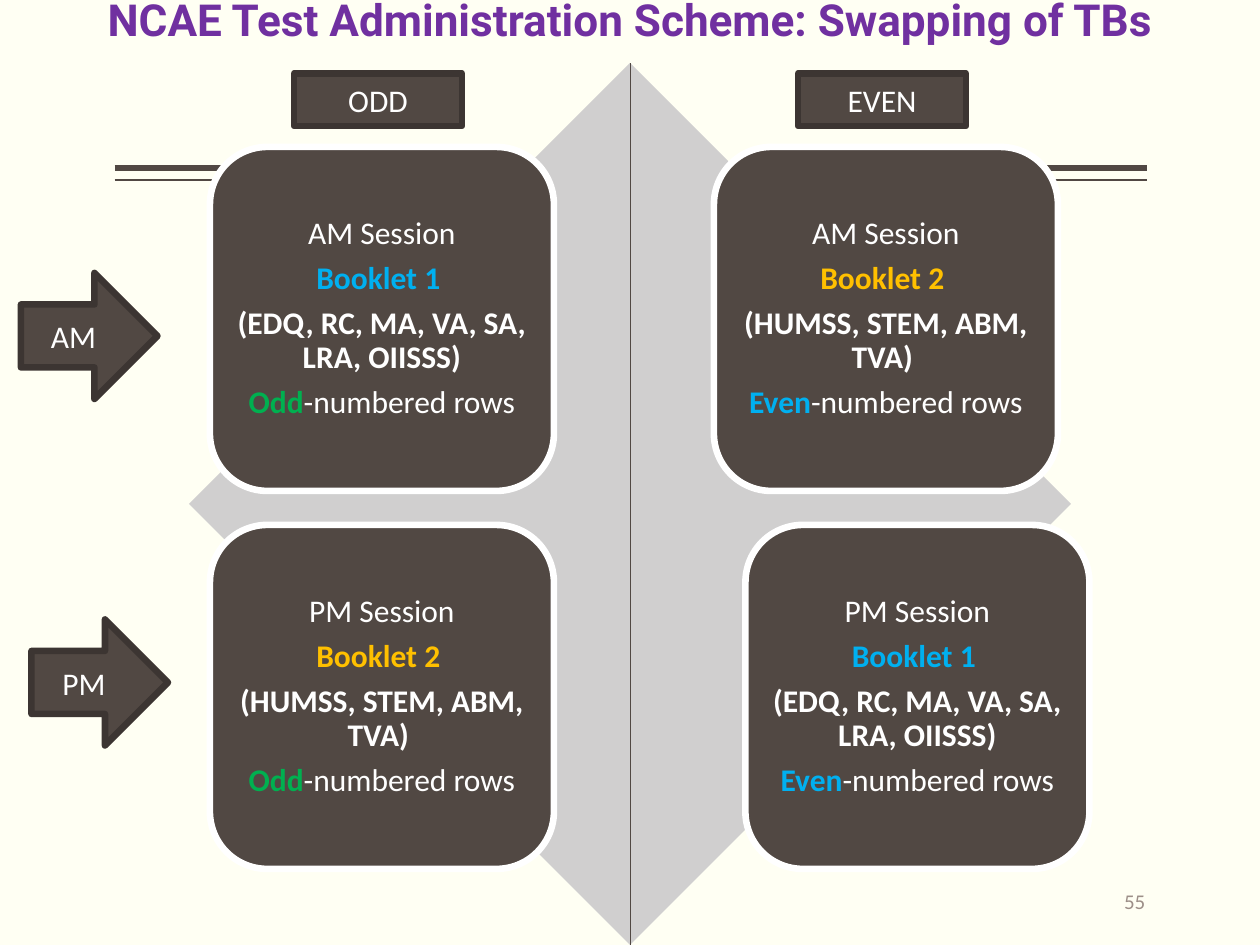
from pptx import Presentation
from pptx.dml.color import RGBColor
from pptx.enum.shapes import MSO_CONNECTOR, MSO_SHAPE as Shape
from pptx.enum.text import MSO_ANCHOR as Anchor, PP_ALIGN as Align
from pptx.oxml.ns import qn
from pptx.util import Inches, Pt
from lxml.etree import SubElement

IVORY = RGBColor(0xFF, 0xFF, 0xF3)
WHITE = RGBColor(0xFF, 0xFF, 0xFF)
BROWN = RGBColor(0x51, 0x48, 0x43)
DARK_BROWN = RGBColor(0x3C, 0x35, 0x32)
TAUPE = RGBColor(0x9D, 0x8F, 0x88)
GREY = RGBColor(0xD0, 0xCF, 0xCF)
PURPLE = RGBColor(0x70, 0x30, 0xA0)
BLUE = RGBColor(0x00, 0xB0, 0xF0)
GOLD = RGBColor(0xFF, 0xC0, 0x00)
GREEN = RGBColor(0x00, 0xB0, 0x50)

BOOKLETS = {
    1: (BLUE, "(EDQ, RC, MA, VA, SA, LRA, OIISSS)"),
    2: (GOLD, "(HUMSS, STEM, ABM, TVA) "),
}
ROW_COLORS = {"Odd": GREEN, "Even": BLUE}
CARD_SIDE = 32.76
# column, row, session, booklet, row parity
CARDS = [
    (20, 14, "AM", 1, "Odd"),
    (68, 14, "AM", 2, "Even"),
    (20, 50, "PM", 2, "Odd"),
    (71, 50, "PM", 1, "Even"),
]


def grid(*cells):
    """Turn grid cells (twelve to the inch) into lengths."""
    return [Inches(cell / 12) for cell in cells]


class SlideBuilder:
    font = "Calibri"
    size = 18
    border = 3.78

    def __init__(self, slide):
        self.slide = slide
        fill = slide.background.fill
        fill.solid()
        fill.fore_color.rgb = IVORY

    def shape(self, kind, cells, fill, line=None):
        shape = self.slide.shapes.add_shape(kind, *grid(*cells))
        shape.shadow.inherit = False
        shape.fill.solid()
        shape.fill.fore_color.rgb = fill
        if line is None:
            shape.line.fill.background()
        else:
            shape.line.color.rgb = line
            shape.line.width = Pt(self.border)
        return shape

    def frame(self, shape, anchor, side, edge):
        """Prepare a text frame with side and top/bottom insets in inches."""
        frame = shape.text_frame
        frame.word_wrap = True
        frame.vertical_anchor = anchor
        frame.margin_left = frame.margin_right = Inches(side)
        frame.margin_top = frame.margin_bottom = Inches(edge)
        return frame

    def style(self, para, align=Align.CENTER, color=WHITE, size=None, font=None, bold=False):
        para.alignment = align
        para.font.name = font or self.font
        para.font.size = Pt(size or self.size)
        para.font.bold = bold
        para.font.color.rgb = color

    def text(self, words, cells, anchor, **style):
        box = self.slide.shapes.add_textbox(*grid(*cells))
        para = self.frame(box, anchor, 0, 0.05).paragraphs[0]
        para.text = words
        self.style(para, **style)
        return para

    def label(self, words, kind, cells):
        shape = self.shape(kind, cells, BROWN, DARK_BROWN)
        para = self.frame(shape, Anchor.MIDDLE, 0.1, 0.05).paragraphs[0]
        para.text = words
        self.style(para)

    def line(self, start, end, width):
        line = self.slide.shapes.add_connector(
            MSO_CONNECTOR.STRAIGHT, *grid(*start, *end))
        line.line.color.rgb = BROWN
        line.line.width = Pt(width)
        SubElement(line._element.spPr, qn("a:effectLst"))
        return line

    def card(self, column, row, session, booklet, parity):
        shape = self.shape(Shape.ROUNDED_RECTANGLE,
                           (column, row, CARD_SIDE, CARD_SIDE), BROWN, WHITE)
        frame = self.frame(shape, Anchor.MIDDLE, 0.05, 0.05)
        booklet_color, subjects = BOOKLETS[booklet]
        content = [
            (f"{session} Session", WHITE, False),
            (f"Booklet {booklet} ", booklet_color, True),
            (subjects, WHITE, True),
            ("", WHITE, False),
        ]
        for index, (words, color, bold) in enumerate(content):
            para = frame.add_paragraph() if index else frame.paragraphs[0]
            para.text = words
            para.line_spacing = 0.9
            para.space_after = Pt(0.35 * self.size)
            self.style(para, color=color, bold=bold)
        span = para.add_run()
        span.text = parity
        span.font.bold = True
        span.font.color.rgb = ROW_COLORS[parity]
        para.add_run().text = "-numbered rows"


def main():
    deck = Presentation()
    deck.slide_width, deck.slide_height = grid(120, 90)
    page = SlideBuilder(deck.slides.add_slide(deck.slide_layouts[6]))

    for row, width in ((16, 3), (17.16, 1)):
        page.line((10.92, row), (109.2, row), width)
    title = page.text("NCAE Test Administration Scheme: Swapping of TBs", (0, 0, 120, 5),
                      Anchor.BOTTOM, color=PURPLE, size=25.2, font="Roboto", bold=True)
    title.line_spacing = 0.9

    diamond = page.shape(Shape.DIAMOND, (18, 6, 84, 84), GREY)
    for card in CARDS:
        page.card(*card)
    page.text("55", (91.08, 83.4, 18, 4.8), Anchor.MIDDLE,
              align=Align.RIGHT, color=TAUPE, size=12)

    divider = page.line((60, 6), (60, 90), 0.5)
    divider.begin_connect(diamond, 0)
    divider.end_connect(diamond, 2)

    for words, column, row in (("AM", 2, 26), ("PM", 3, 59)):
        page.label(words, Shape.RIGHT_ARROW, (column, row, 13, 12))
    for words, column in (("ODD", 28), ("EVEN", 76)):
        page.label(words, Shape.RECTANGLE, (column, 7, 16, 5))

    deck.save("out.pptx")


if __name__ == "__main__":
    main()
